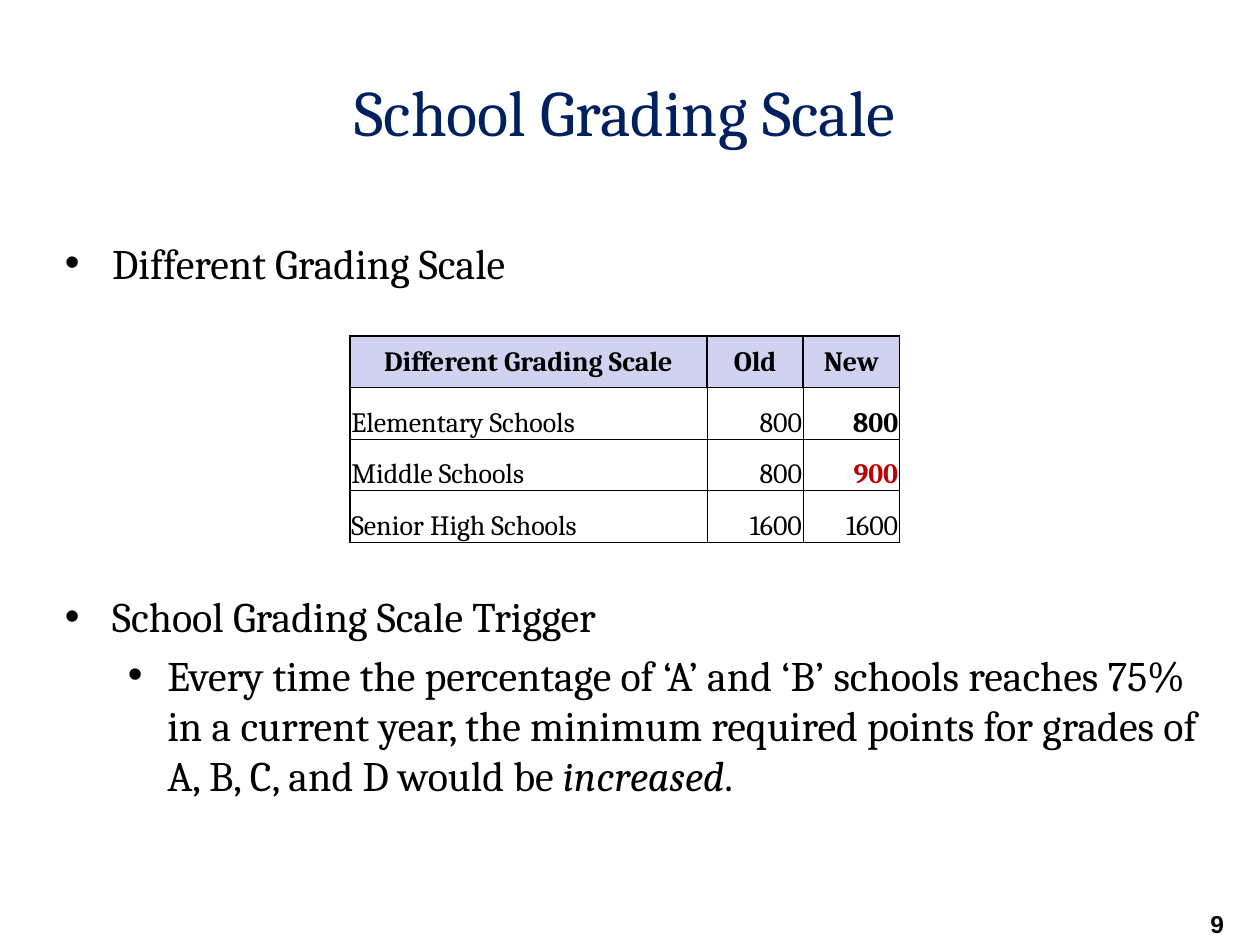
import pptx
import pptx.dml.color
import pptx.enum.text
import pptx.oxml.ns
import pptx.util
from lxml import etree

Pt = pptx.util.Pt
ALIGN = pptx.enum.text.PP_ALIGN
ANCHOR = pptx.enum.text.MSO_ANCHOR
qn = pptx.oxml.ns.qn

COLORS = {"text": "000000", "title": "002060", "header": "D1D1F0", "raised": "C00000"}
SERIF, SANS = "Cambria", "Arial"

GRADING = [
    ("Different Grading Scale", "Old", "New"),
    ("Elementary Schools", "800", "800"),
    ("Middle Schools", "800", "900"),
    ("Senior High Schools", "1600", "1600"),
]
COLUMN_WIDTHS = (204, 55, 55)
ROW_HEIGHT = 29.5
# Emphasis of single cells, by row and column
EMPHASIS = {(1, 2): {"bold": True}, (2, 2): {"bold": True, "color": "raised"}}


def rgb(name):
    return pptx.dml.color.RGBColor.from_string(COLORS[name])


def write(paragraph, text, size=24, font=SERIF, color="text", bold=False,
          italic=False, align=ALIGN.LEFT):
    paragraph.alignment = align
    run = paragraph.add_run()
    run.text = text
    run.font.size = Pt(size)
    run.font.name = font
    run.font.bold = bold
    run.font.italic = italic
    run.font.color.rgb = rgb(color)


def set_frame(frame, anchor=ANCHOR.TOP):
    frame.word_wrap = True
    frame.auto_size = pptx.enum.text.MSO_AUTO_SIZE.NONE
    frame.vertical_anchor = anchor


def add_box(slide, left, top, width, height):
    frame = slide.shapes.add_textbox(Pt(left), Pt(top), Pt(width), Pt(height)).text_frame
    set_frame(frame)
    return frame


def make_bullet(paragraph, margin, hanging, level=0):
    paragraph.level = level
    properties = paragraph._p.get_or_add_pPr()
    properties.set("marL", str(Pt(margin)))
    properties.set("indent", str(-Pt(hanging)))
    font = etree.SubElement(properties, qn("a:buFont"))
    font.set("typeface", SANS)
    etree.SubElement(properties, qn("a:buChar")).set("char", "•")


def add_borders(cell, widths):
    properties = cell._tc.get_or_add_tcPr()
    for side, width in zip("LRTB", widths):
        line = etree.SubElement(properties, qn(f"a:ln{side}"), w=str(Pt(width)))
        fill = etree.SubElement(line, qn("a:solidFill"))
        etree.SubElement(fill, qn("a:srgbClr"), val=COLORS["text"])


def add_title(slide):
    title = slide.shapes.title
    title.left, title.top, title.width, title.height = Pt(18), Pt(36), Pt(678), Pt(54)
    set_frame(title.text_frame, ANCHOR.MIDDLE)
    write(title.text_frame.paragraphs[0], "School Grading Scale", size=37,
          color="title", align=ALIGN.CENTER)


def add_points(slide):
    frame = add_box(slide, 30, 132, 672, 378)
    scale = frame.paragraphs[0]
    make_bullet(scale, 27, 27)
    write(scale, "Different Grading Scale")

    # The space before this point holds the table
    trigger = frame.add_paragraph()
    make_bullet(trigger, 27, 27)
    trigger.space_before = Pt(173)
    write(trigger, "School Grading Scale Trigger")

    rule = frame.add_paragraph()
    make_bullet(rule, 58.5, 22.5, level=1)
    rule.space_before = Pt(4.8)
    write(rule, "Every time the percentage of ‘A’ and ‘B’ schools reaches 75% in a "
                "current year, the minimum required points for grades of A, B, C, "
                "and D would be ")
    write(rule, "increased", italic=True)
    write(rule, ".")


def add_grading_table(slide):
    last_row, last_column = len(GRADING) - 1, len(COLUMN_WIDTHS) - 1
    table = slide.shapes.add_table(
        len(GRADING), len(COLUMN_WIDTHS), Pt(200), Pt(192),
        Pt(sum(COLUMN_WIDTHS)), Pt(ROW_HEIGHT * len(GRADING))).table
    table.first_row = table.horz_banding = False
    for column, width in zip(table.columns, COLUMN_WIDTHS):
        column.width = Pt(width)

    for r, values in enumerate(GRADING):
        table.rows[r].height = Pt(ROW_HEIGHT)
        header = r == 0
        for c, value in enumerate(values):
            cell = table.cell(r, c)
            cell.margin_left = cell.margin_right = cell.margin_top = Pt(0.75)
            cell.margin_bottom = 0
            cell.vertical_anchor = ANCHOR.MIDDLE if header else ANCHOR.BOTTOM
            # Heavy lines around the table and between the headings
            heavy = (header or c == 0, header or c == last_column, header, r == last_row)
            add_borders(cell, [1 if side else 0.5 for side in heavy])
            if header:
                cell.fill.solid()
                cell.fill.fore_color.rgb = rgb("header")
                style = {"bold": True, "align": ALIGN.CENTER}
            else:
                cell.fill.background()
                style = {"align": ALIGN.RIGHT if c else ALIGN.LEFT}
            style.update(EMPHASIS.get((r, c), {}))
            write(cell.text_frame.paragraphs[0], value, size=16, **style)


def add_page_number(slide):
    page = add_box(slide, 538.5, 516, 168, 21)
    write(page.paragraphs[0], "9", size=14, font=SANS, bold=True, align=ALIGN.RIGHT)


def main():
    deck = pptx.Presentation()
    deck.slide_width, deck.slide_height = Pt(720), Pt(540)
    slide = deck.slides.add_slide(deck.slide_layouts[5])
    add_title(slide)
    add_points(slide)
    add_grading_table(slide)
    add_page_number(slide)
    deck.save("out.pptx")


if __name__ == "__main__":
    main()
